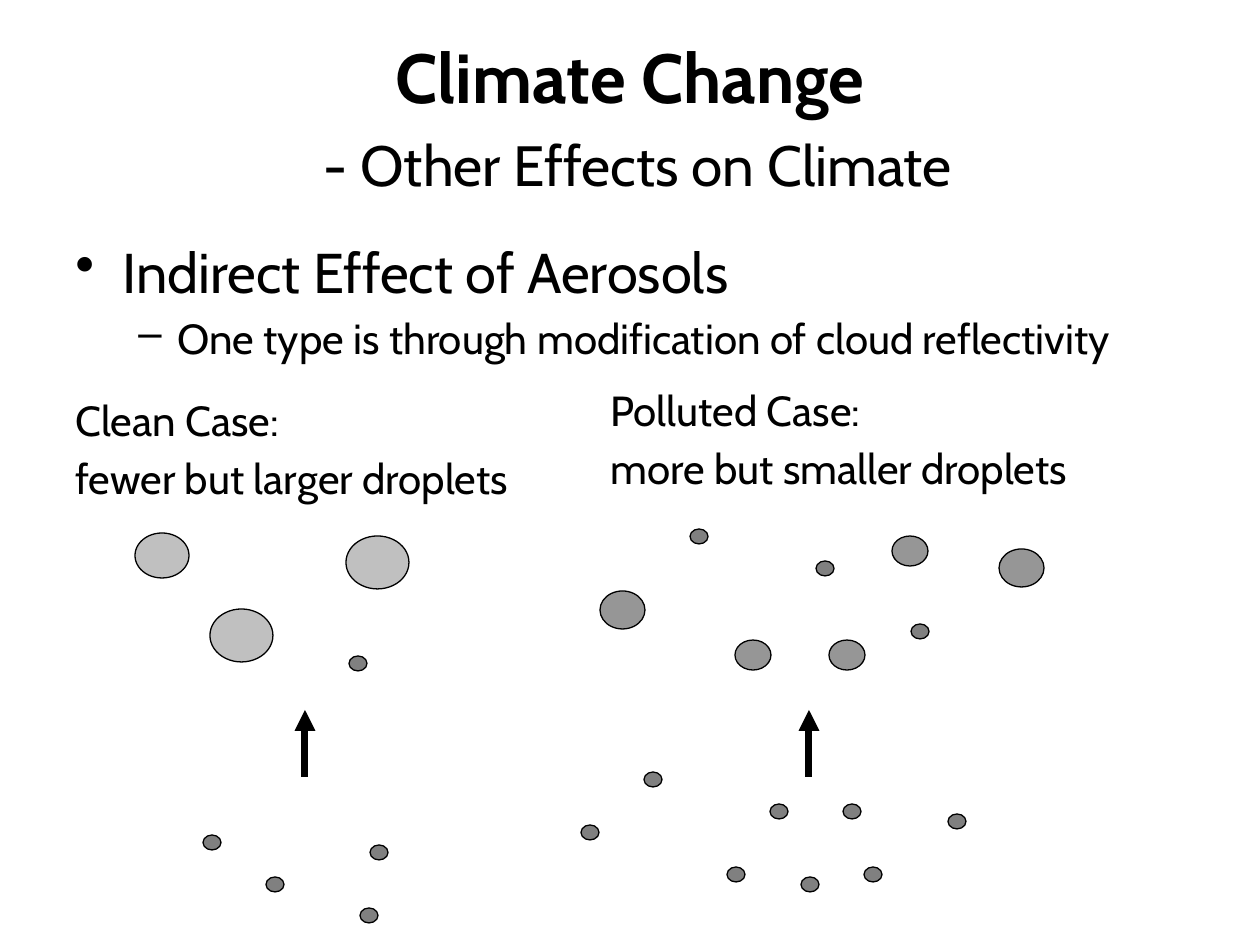
"""Build a slide on how aerosols change cloud droplets."""
from dataclasses import dataclass

from lxml.etree import SubElement
from pptx import Presentation
from pptx.dml.color import RGBColor
from pptx.enum.shapes import MSO_CONNECTOR, MSO_SHAPE
from pptx.enum.text import MSO_ANCHOR, PP_ALIGN
from pptx.oxml.ns import qn
from pptx.util import Emu, Pt


@dataclass(frozen=True)
class Theme:
    font: str = "Cabin"
    ink: RGBColor = RGBColor(0, 0, 0)
    particle: RGBColor = RGBColor(0x80, 0x80, 0x80)
    clean: RGBColor = RGBColor(0xC0, 0xC0, 0xC0)
    polluted: RGBColor = RGBColor(0x96, 0x96, 0x96)
    title: float = 39.6
    subtitle: float = 32.4
    heading: float = 32
    body: float = 24
    outline: float = 0.75
    arrow: float = 4


THEME = Theme()
SCALE = 914400 / 126

TITLE_BOX = (63, 38, 1134, 158)
TITLE = "Climate Change"
SUBTITLE = "- Other Effects on Climate"

PLAIN = (0, 0, None)
TEXT_BOXES = [
    ((63, 231, 1134, 147), [
        ("Indirect Effect of Aerosols", THEME.heading, (47, 47, "•")),
        ("One type is through modification of cloud reflectivity", THEME.body, (102, 39, "–")),
    ]),
    ((63, 388, 525, 125), [
        ("Clean Case:", THEME.body, PLAIN),
        ("fewer but larger droplets", THEME.body, PLAIN),
    ]),
    ((598, 378, 577, 125), [
        ("Polluted Case:", THEME.body, PLAIN),
        ("more but smaller droplets", THEME.body, PLAIN),
    ]),
]

DROPLETS = [
    ((18, 15), THEME.particle, [
        (203, 835), (266, 877), (370, 845), (360, 908),
        (644, 772), (581, 825), (843, 804), (727, 867),
        (770, 804), (864, 867), (801, 877), (948, 814),
        (349, 656), (690, 529), (816, 561), (911, 624),
    ]),
    ((54, 45), THEME.clean, [(135, 533)]),
    ((63, 53), THEME.clean, [(210, 609), (346, 536)]),
    ((45, 38), THEME.polluted, [(600, 591), (999, 549)]),
    ((36, 30), THEME.polluted, [(735, 640), (829, 640), (892, 536)]),
]

ARROW_CENTRES = [305, 809]
ARROW_BOTTOM, ARROW_TOP = 777, 710


def px(*lengths):
    return [Emu(round(length * SCALE)) for length in lengths]


def style_font(font, size, bold=False):
    font.name = THEME.font
    font.size = Pt(size)
    font.bold = bold
    font.color.rgb = THEME.ink


def add_text_frame(slide, box):
    frame = slide.shapes.add_textbox(*px(*box)).text_frame
    frame.word_wrap = True
    return frame


def add_title(slide):
    frame = add_text_frame(slide, TITLE_BOX)
    frame.vertical_anchor = MSO_ANCHOR.MIDDLE
    paragraph = frame.paragraphs[0]
    paragraph.alignment = PP_ALIGN.CENTER
    style_font(paragraph.font, THEME.title, bold=True)
    runs = [(TITLE, THEME.title, True), (" ", THEME.title, True), (SUBTITLE, THEME.subtitle, False)]
    for text, size, bold in runs:
        run = paragraph.add_run()
        run.text = text
        style_font(run.font, size, bold)
        if text == TITLE:
            paragraph.add_line_break()


def add_text(slide, box, lines):
    frame = add_text_frame(slide, box)
    for index, (text, size, (margin, hanging, bullet)) in enumerate(lines):
        paragraph = frame.add_paragraph() if index else frame.paragraphs[0]
        paragraph.text = text
        paragraph.space_before = Pt(size * 0.2)
        style_font(paragraph.font, size)
        if bullet:
            properties = paragraph._p.get_or_add_pPr()
            left, indent = px(margin, -hanging)
            properties.set("marL", str(left))
            properties.set("indent", str(indent))
            bullet_element = properties.makeelement(qn("a:buChar"), {"char": bullet})
            properties.insert_element_before(bullet_element, "a:tabLst", "a:defRPr", "a:extLst")


def add_droplet(slide, position, size, color):
    droplet = slide.shapes.add_shape(MSO_SHAPE.OVAL, *px(*position, *size))
    droplet.shadow.inherit = False
    droplet.fill.solid()
    droplet.fill.fore_color.rgb = color
    droplet.line.color.rgb = THEME.ink
    droplet.line.width = Pt(THEME.outline)


def add_arrow(slide, centre):
    ends = px(centre, ARROW_BOTTOM, centre, ARROW_TOP)
    arrow = slide.shapes.add_connector(MSO_CONNECTOR.STRAIGHT, *ends)
    arrow.line.color.rgb = THEME.ink
    arrow.line.width = Pt(THEME.arrow)
    SubElement(arrow.line._get_or_add_ln(), qn("a:tailEnd"), type="triangle")
    SubElement(arrow._element.spPr, qn("a:effectLst"))


def main():
    presentation = Presentation()
    presentation.slide_width, presentation.slide_height = px(1260, 945)
    slide = presentation.slides.add_slide(presentation.slide_layouts[6])
    add_title(slide)
    for box, lines in TEXT_BOXES:
        add_text(slide, box, lines)
    for size, color, positions in DROPLETS:
        for position in positions:
            add_droplet(slide, position, size, color)
    for centre in ARROW_CENTRES:
        add_arrow(slide, centre)
    presentation.save("out.pptx")


if __name__ == "__main__":
    main()
